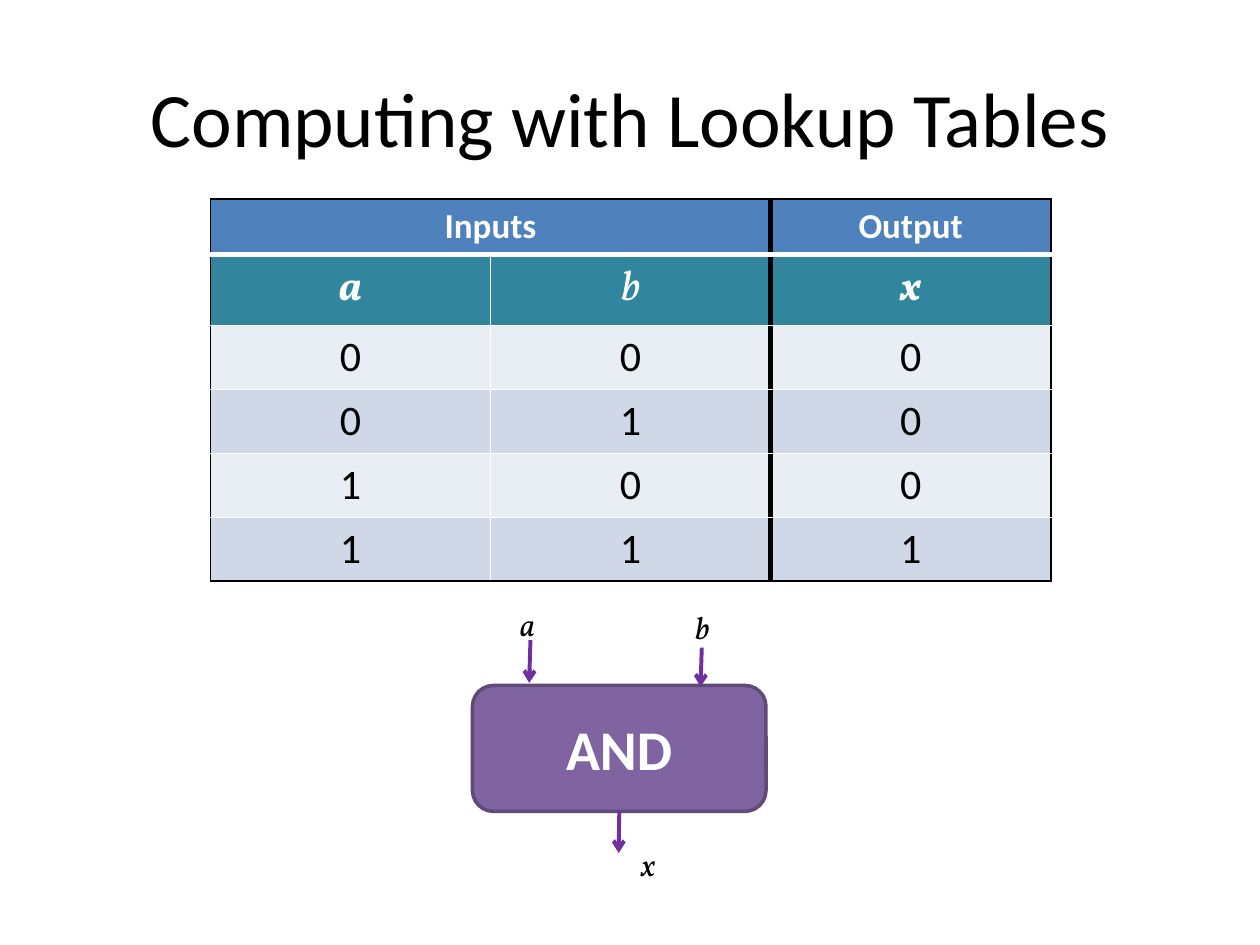
"""Build a slide that shows the AND function as a lookup table and as a gate."""
import lxml.etree
import pptx
import pptx.dml.color
import pptx.enum.shapes
import pptx.enum.text
import pptx.oxml.ns
import pptx.util

Inches, Pt = pptx.util.Inches, pptx.util.Pt
qn = pptx.oxml.ns.qn
CENTER = pptx.enum.text.PP_ALIGN.CENTER
MIDDLE = pptx.enum.text.MSO_ANCHOR.MIDDLE
COLORS = {
    "black": "000000", "white": "FFFFFF", "header": "4F81BD", "names": "31859C",
    "light": "E9EDF4", "dark": "D0D8E8", "gate": "8064A2", "edge": "5F4A78",
    "arrow": "7030A0",
}


def rgb(name):
    return pptx.dml.color.RGBColor.from_string(COLORS[name])


def write(tf, text, size, color, font="Calibri", bold=False, italic=False, align=CENTER):
    tf.text = text
    p = tf.paragraphs[0]
    p.alignment = align
    f = p.runs[0].font
    f.name, f.size, f.bold, f.italic = font, Pt(size), bold, italic
    f.color.rgb = rgb(color)


prs = pptx.Presentation()
prs.slide_width, prs.slide_height = Inches(10), Inches(7.5)
s = prs.slides.add_slide(prs.slide_layouts[5])

title = s.shapes.title
title.left, title.top, title.width, title.height = (Inches(v) for v in (0.5, 0.3, 9, 1.25))
write(title.text_frame, "Computing with Lookup Tables", 44, "black")
title.text_frame.vertical_anchor = MIDDLE

rows = [("Inputs", "", "Output"), ("a", "b", "x"),
        ("0", "0", "0"), ("0", "1", "0"), ("1", "0", "0"), ("1", "1", "1")]
fills = ["header", "names", "light", "dark", "light", "dark"]
frame = s.shapes.add_table(6, 3, Inches(1.67), Inches(1.58), Inches(6.67), Inches(2.93))
table = frame.table
for i, row in enumerate(table.rows):
    row.height = Inches(0.22 if i < 2 else 0.41)
frame.height = Inches(2.93)
table.cell(0, 0).merge(table.cell(0, 1))

for i, row in enumerate(rows):
    for j, text in enumerate(row):
        cell = table.cell(i, j)
        cell.fill.solid()
        cell.fill.fore_color.rgb = rgb(fills[i])
        if text:
            write(cell.text_frame, text, 20 if i == 0 else 24,
                  "white" if i < 2 else "black",
                  "Vollkorn" if i == 1 else "Calibri",
                  bold=i < 2 and text != "b", italic=i == 1)
        borders = {
            "lnL": [("black", 1), ("white", 1), ("black", 3)][j],
            "lnR": [("black", 3) if i == 0 else ("white", 1), ("black", 3), ("black", 1)][j],
            "lnT": ("black" if i == 0 else "white", 1),
            "lnB": ("white", 3) if i == 0 else ("black" if i == 5 else "white", 1),
        }
        tcPr = cell._tc.get_or_add_tcPr()
        for k, (tag, (color, width)) in enumerate(borders.items()):
            ln = lxml.etree.Element(qn(f"a:{tag}"), w=str(Pt(width)))
            fill = lxml.etree.SubElement(ln, qn("a:solidFill"))
            lxml.etree.SubElement(fill, qn("a:srgbClr"), val=COLORS[color])
            tcPr.insert(k, ln)

gate = s.shapes.add_shape(pptx.enum.shapes.MSO_SHAPE.ROUNDED_RECTANGLE,
                          Inches(3.75), Inches(5.44), Inches(2.33), Inches(1))
gate.shadow.inherit = False
gate.fill.solid()
gate.fill.fore_color.rgb = rgb("gate")
gate.line.color.rgb = rgb("edge")
gate.line.width = Pt(2)
write(gate.text_frame, "AND", 32, "white", bold=True)
gate.text_frame.vertical_anchor = MIDDLE

wires = [
    ("a", 4.03, 4.75, 0.31, (4.21, 5.08, 4.2, 5.42)),
    ("b", 5.42, 4.78, 0.32, (5.57, 5.14, 5.56, 5.45)),
    ("x", 4.99, 6.66, 0.33, (4.92, 6.44, 4.91, 6.77)),
]
for name, left, top, width, ends in wires:
    wire = s.shapes.add_connector(pptx.enum.shapes.MSO_CONNECTOR.STRAIGHT,
                                  *(Inches(v) for v in ends))
    wire.line.color.rgb = rgb("arrow")
    wire.line.width = Pt(2.25)
    lxml.etree.SubElement(wire.line._get_or_add_ln(), qn("a:tailEnd"), type="arrow")
    lxml.etree.SubElement(wire._element.spPr, qn("a:effectLst"))
    if name == "x":
        wire.begin_connect(gate, 2)
    label = s.shapes.add_textbox(Inches(left), Inches(top), Inches(width), Inches(0.4))
    tf = label.text_frame
    tf.word_wrap = False
    tf.auto_size = pptx.enum.text.MSO_AUTO_SIZE.SHAPE_TO_FIT_TEXT
    write(tf, name, 18, "black", "Vollkorn", italic=True, align=pptx.enum.text.PP_ALIGN.LEFT)

prs.save("out.pptx")
